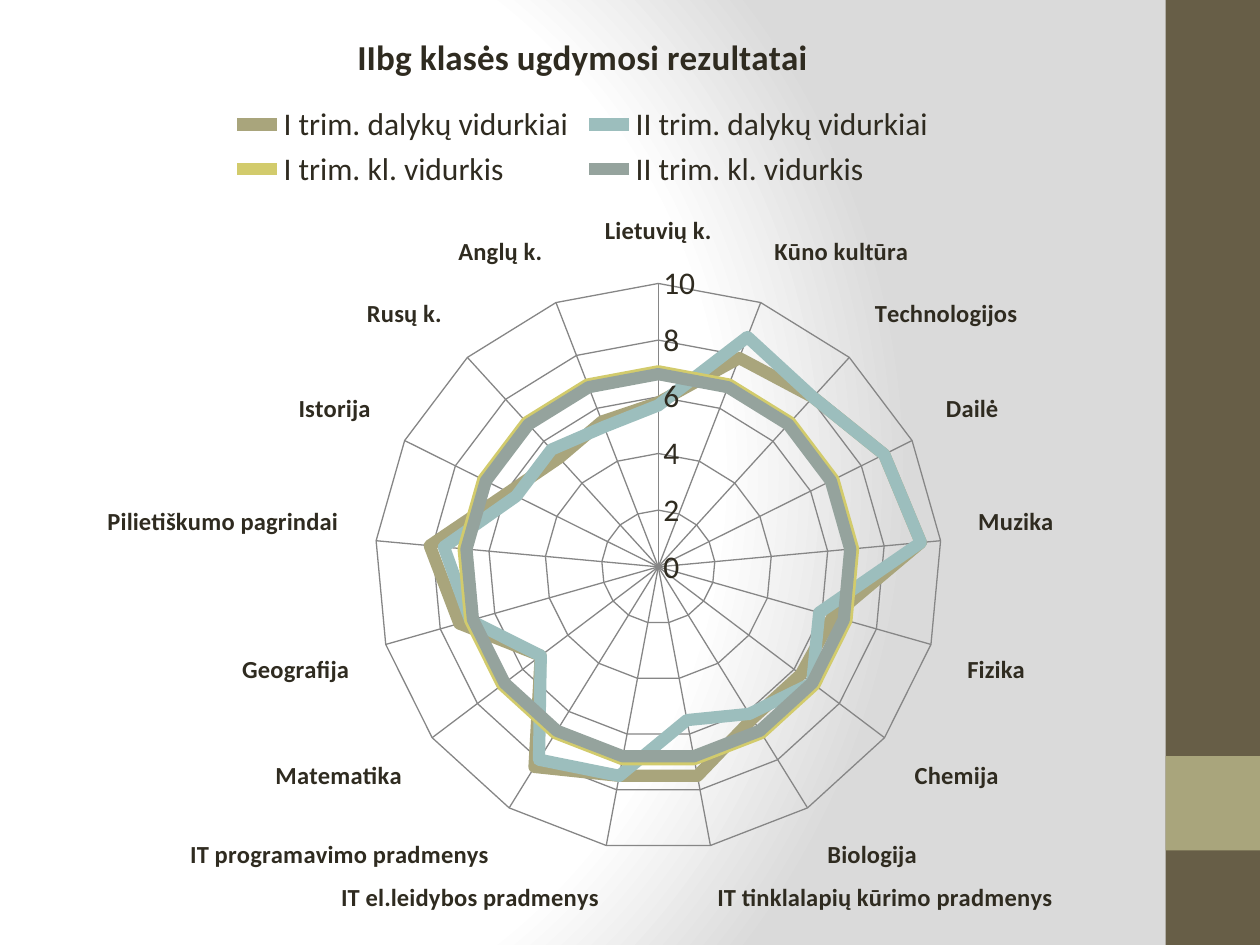
import pptx
import pptx.chart.data
import pptx.dml.color
import pptx.enum.chart
import pptx.enum.shapes
import pptx.oxml
import pptx.util

Pt = pptx.util.Pt
RGBColor = pptx.dml.color.RGBColor
INK = RGBColor(0x2F, 0x2B, 0x20)
BROWN = RGBColor(0x67, 0x5E, 0x47)
KHAKI = RGBColor(0xA9, 0xA5, 0x7C)
TEAL = RGBColor(0x9C, 0xBE, 0xBD)
YELLOW = RGBColor(0xD2, 0xCB, 0x6C)
SAGE = RGBColor(0x95, 0xA3, 0x9D)
GRID = RGBColor(0x86, 0x86, 0x86)

A_NS = 'xmlns:a="http://schemas.openxmlformats.org/drawingml/2006/main"'
C_NS = 'xmlns:c="http://schemas.openxmlformats.org/drawingml/2006/chart"'

# Subject, first-term average, second-term average
SUBJECTS = [
    ("Lietuvių k.", 5.8, 5.7),
    ("Anglų k.", 5.5, 5.3),
    ("Rusų k.", 5.2, 5.6),
    ("Istorija", 5.9, 5.6),
    ("Pilietiškumo pagrindai", 8.1, 7.6),
    ("Geografija", 7.3, 6.9),
    ("Matematika", 5.2, 5.2),
    ("IT programavimo pradmenys", 8.3, 8),
    ("IT el.leidybos pradmenys", 7.5, 7.5),
    ("IT tinklalapių kūrimo pradmenys", 7.5, 5.5),
    ("Biologija", 6.3, 6.1),
    ("Chemija", 6.3, 6.8),
    ("Fizika", 6.4, 5.9),
    ("Muzika", 9.3, 9.3),
    ("Dailė", 8.9, 8.9),
    ("Technologijos", 8.1, 8.1),
    ("Kūno kultūra", 7.9, 8.7),
]
CLASS_AVERAGES = (6.9, 6.8)


def set_background(slide):
    fill = slide.background.fill
    fill.gradient()
    gradient = slide._element.cSld.bg.bgPr[0]
    radial = pptx.oxml.parse_xml(
        f'<a:gradFill {A_NS} rotWithShape="1"><a:gsLst>'
        '<a:gs pos="0"><a:srgbClr val="FFFFFF"/></a:gs>'
        '<a:gs pos="75000"><a:srgbClr val="FFFFFF"/></a:gs>'
        '<a:gs pos="100000"><a:srgbClr val="DADADA"/></a:gs></a:gsLst>'
        '<a:path path="circle">'
        '<a:fillToRect l="20000" t="50000" r="100000" b="50000"/>'
        '</a:path></a:gradFill>')
    gradient.getparent().replace(gradient, radial)


def add_sidebar(slide, left, top, width, height):
    # Full-height band with a square accent
    for y, h, color in ((top, height, BROWN), (top + height * 0.8, width, KHAKI)):
        band = slide.shapes.add_shape(
            pptx.enum.shapes.MSO_SHAPE.RECTANGLE, Pt(left), Pt(y), Pt(width), Pt(h))
        band.shadow.inherit = False
        band.fill.solid()
        band.fill.fore_color.rgb = color
        band.line.fill.background()


def style_font(font, size, bold=False):
    font.name = "Calibri"
    font.size = Pt(size)
    font.bold = bold
    font.color.rgb = INK


def style_grid(line):
    line.color.rgb = GRID
    line.width = Pt(0.75)


def add_results_chart(slide, left, top, width, height):
    names, first_term, second_term = zip(*SUBJECTS)
    first_class, second_class = ([avg] * len(names) for avg in CLASS_AVERAGES)
    lines = [
        ("I trim. dalykų vidurkiai", first_term, KHAKI),
        ("II trim. dalykų vidurkiai", second_term, TEAL),
        ("I trim. kl. vidurkis", first_class, YELLOW),
        ("II trim. kl. vidurkis", second_class, SAGE),
    ]
    results = pptx.chart.data.CategoryChartData()
    results.categories = names
    for name, values, _ in lines:
        results.add_series(name, values)
    chart = slide.shapes.add_chart(
        pptx.enum.chart.XL_CHART_TYPE.RADAR,
        Pt(left), Pt(top), Pt(width), Pt(height), results).chart
    style_font(chart.font, 10)

    # Title and legend
    chart.has_title = True
    heading = chart.chart_title.text_frame
    heading.text = "IIbg klasės ugdymosi rezultatai"
    style_font(heading.paragraphs[0].runs[0].font, 20, bold=True)
    chart.has_legend = True
    chart.legend.position = pptx.enum.chart.XL_LEGEND_POSITION.TOP
    chart.legend.include_in_layout = False
    style_font(chart.legend.font, 18)

    # Series lines
    plot = chart.plots[0]
    plot.vary_by_categories = False
    for series, (_, _, color) in zip(plot.series, lines):
        series.smooth = False
        series.marker.style = pptx.enum.chart.XL_MARKER_STYLE.NONE
        series.format.line.color.rgb = color
        series.format.line.width = Pt(7)

    # Axes
    subjects, marks = chart.category_axis, chart.value_axis
    for axis, size, bold in ((subjects, 14, True), (marks, 18, False)):
        axis.has_major_gridlines = True
        style_grid(axis.major_gridlines.format.line)
        axis.major_tick_mark = pptx.enum.chart.XL_TICK_MARK.NONE
        axis.minor_tick_mark = pptx.enum.chart.XL_TICK_MARK.NONE
        style_font(axis.tick_labels.font, size, bold)
    subjects.reverse_order = True
    subjects.format.line.fill.background()
    marks.minimum_scale, marks.maximum_scale, marks.major_unit = 0, 10, 2
    marks.tick_labels.number_format = "#,##0"
    marks.tick_labels.number_format_is_linked = False
    style_grid(marks.format.line)

    # Place of the radar web inside the chart
    plot_area = chart._chartSpace.chart.plotArea
    for layout in plot_area.findall("{*}layout"):
        plot_area.remove(layout)
    web = (("x", 0.32), ("y", 0.3), ("w", 0.49), ("h", 0.6))
    plot_area.insert(0, pptx.oxml.parse_xml(
        f'<c:layout {C_NS}><c:manualLayout><c:layoutTarget val="inner"/>'
        '<c:xMode val="edge"/><c:yMode val="edge"/>'
        + "".join(f'<c:{key} val="{share}"/>' for key, share in web)
        + '</c:manualLayout></c:layout>'))


def main():
    deck = pptx.Presentation()
    deck.slide_width, deck.slide_height = Pt(720), Pt(540)
    slide = deck.slides.add_slide(deck.slide_layouts[6])
    set_background(slide)
    add_sidebar(slide, 666, 0, 54, 540)
    add_results_chart(slide, 0, 0, 666, 540)
    deck.save("out.pptx")


if __name__ == "__main__":
    main()
